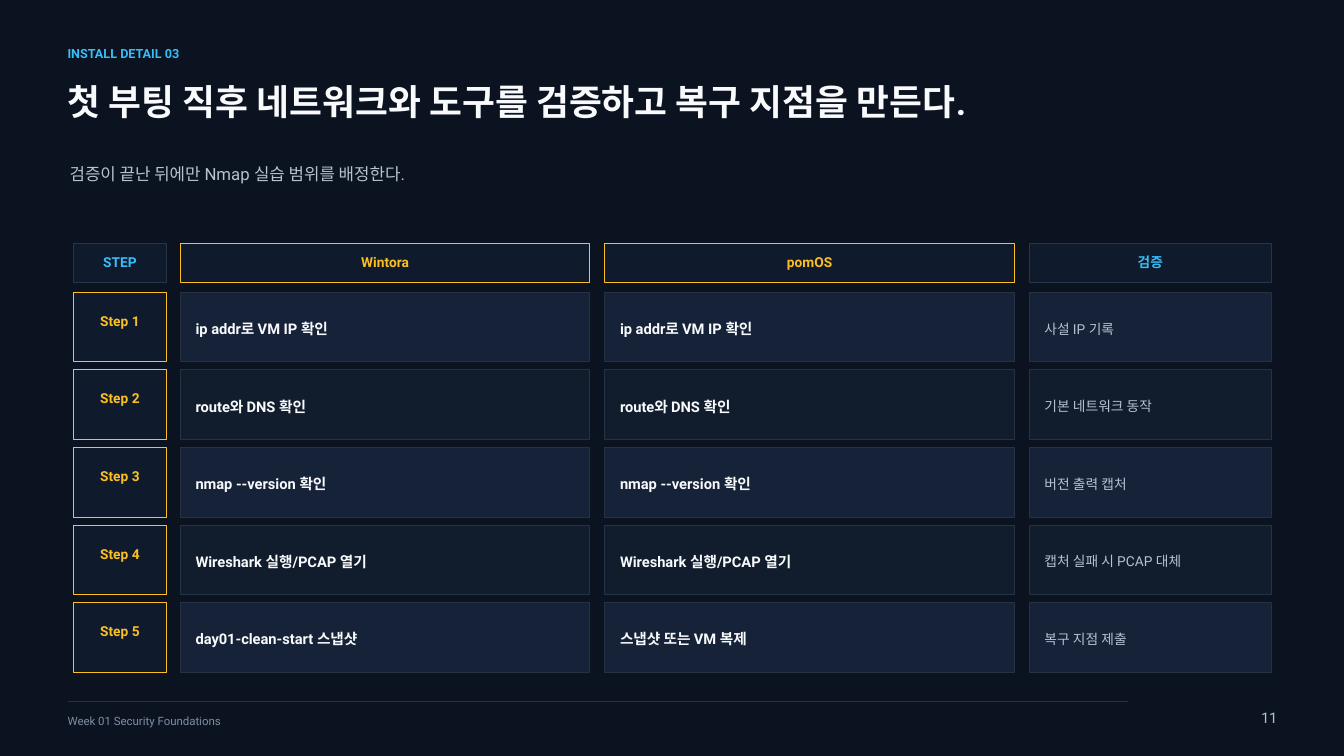
from pptx import Presentation
from pptx.dml.color import RGBColor
from pptx.enum.shapes import MSO_CONNECTOR, MSO_SHAPE
from pptx.enum.text import MSO_ANCHOR, MSO_AUTO_SIZE, PP_ALIGN
from pptx.oxml.ns import qn
from pptx.util import Inches, Pt
from lxml import etree

COLORS = {
    "page": "0B1220", "head": "0F1B2D", "odd": "152238", "even": "111C2D",
    "edge": "243244", "head_edge": "263548", "amber": "FBBF24",
    "sky": "38BDF8", "white": "F8FAFC", "soft": "B6C2D1", "muted": "7D8EA3",
}
# left edge and width of each column
COLUMNS = [(0.73, 0.92), (1.79, 4.06), (6, 4.06), (10.21, 2.4)]
HEADERS = [
    ("STEP", "sky", "head_edge"),
    ("Wintora", "amber", "amber"),
    ("pomOS", "amber", "amber"),
    ("검증", "sky", "head_edge"),
]
STEPS = [
    ("ip addr로 VM IP 확인", "ip addr로 VM IP 확인", "사설 IP 기록"),
    ("route와 DNS 확인", "route와 DNS 확인", "기본 네트워크 동작"),
    ("nmap --version 확인", "nmap --version 확인", "버전 출력 캡처"),
    ("Wireshark 실행/PCAP 열기", "Wireshark 실행/PCAP 열기", "캡처 실패 시 PCAP 대체"),
    ("day01-clean-start 스냅샷", "스냅샷 또는 VM 복제", "복구 지점 제출"),
]
HEAD_TOP, HEAD_HEIGHT = 2.42, 0.38
ROW_TOP, ROW_HEIGHT, ROW_PITCH = 2.9, 0.69, 0.77

# insets are left, top, right, bottom
HEAD = {"size": 9.8, "bold": True, "align": PP_ALIGN.CENTER, "insets": (0.1, 0.1, 0.1, 0)}
STEP = {"size": 9.8, "bold": True, "align": PP_ALIGN.CENTER, "insets": (0.08, 0.2, 0.08, 0)}
ACTION = {"size": 10.5, "bold": True, "anchor": MSO_ANCHOR.MIDDLE,
          "insets": (0.15, 0.12, 0.14, 0.09)}
CHECK = {**ACTION, "size": 9.8, "bold": False}


def rgb(name):
    return RGBColor.from_string(COLORS[name])


def write(sp, text, color, size, bold=False, align=PP_ALIGN.LEFT,
          anchor=MSO_ANCHOR.TOP, insets=(0, 0, 0, 0)):
    """Put one formatted paragraph into a shape."""
    tf = sp.text_frame
    frame = {"word_wrap": True, "auto_size": MSO_AUTO_SIZE.NONE, "vertical_anchor": anchor}
    for side, inset in zip(("left", "top", "right", "bottom"), insets):
        frame[f"margin_{side}"] = Inches(inset)
    for name, value in frame.items():
        setattr(tf, name, value)
    p = tf.paragraphs[0]
    p.alignment = align
    r = p.add_run()
    r.text = text
    for name, value in {"name": "Roboto", "size": Pt(size), "bold": bold}.items():
        setattr(r.font, name, value)
    r.font.color.rgb = rgb(color)


def add_text(s, box, text, color, size, **style):
    sp = s.shapes.add_textbox(*map(Inches, box))
    write(sp, text, color, size, **style)


def add_cell(s, box, fill, edge, text, color, style):
    sp = s.shapes.add_shape(MSO_SHAPE.RECTANGLE, *map(Inches, box))
    sp.shadow.inherit = False
    sp.fill.solid()
    sp.fill.fore_color.rgb = rgb(fill)
    sp.line.color.rgb = rgb(edge)
    sp.line.width = Pt(0.75)
    write(sp, text, color, **style)


def add_title(s, box, text):
    title = s.shapes.title
    for name, value in zip(("left", "top", "width", "height"), box):
        setattr(title, name, Inches(value))
    write(title, text, "white", 25.5, bold=True)


def add_rule(s, left, right, y):
    rule = s.shapes.add_connector(
        MSO_CONNECTOR.STRAIGHT, Inches(left), Inches(y), Inches(right), Inches(y))
    rule.line.color.rgb = rgb("edge")
    rule.line.width = Pt(0.75)
    etree.SubElement(rule._element.spPr, qn("a:effectLst"))


def add_step_grid(s):
    for (left, width), (text, color, edge) in zip(COLUMNS, HEADERS):
        add_cell(s, (left, HEAD_TOP, width, HEAD_HEIGHT), "head", edge, text, color, HEAD)
    for i, (first, second, check) in enumerate(STEPS):
        band = "even" if i % 2 else "odd"
        cells = [
            (f"Step {i + 1}", "head", "amber", "amber", STEP),
            (first, band, "edge", "white", ACTION),
            (second, band, "edge", "white", ACTION),
            (check, band, "edge", "soft", CHECK),
        ]
        top = ROW_TOP + i * ROW_PITCH
        for (left, width), (text, fill, edge, color, style) in zip(COLUMNS, cells):
            add_cell(s, (left, top, width, ROW_HEIGHT), fill, edge, text, color, style)


def main():
    prs = Presentation()
    prs.slide_width, prs.slide_height = Inches(13.33), Inches(7.5)
    s = prs.slides.add_slide(prs.slide_layouts[5])
    s.background.fill.solid()
    s.background.fill.fore_color.rgb = rgb("page")

    add_text(s, (0.67, 0.46, 2.81, 0.23), "INSTALL DETAIL 03", "sky", 9, bold=True)
    add_title(s, (0.67, 0.79, 9.38, 0.85),
              "첫 부팅 직후 네트워크와 도구를 검증하고 복구 지점을 만든다.")
    add_text(s, (0.69, 1.62, 9.58, 0.46),
             "검증이 끝난 뒤에만 Nmap 실습 범위를 배정한다.", "soft", 12)
    add_step_grid(s)
    add_rule(s, 0.67, 11.19, 6.96)
    add_text(s, (0.67, 7.08, 6.25, 0.21), "Week 01 Security Foundations", "muted", 8.2)
    add_text(s, (12.19, 7.03, 0.48, 0.27), "11", "soft", 10.5, align=PP_ALIGN.RIGHT)
    prs.save("out.pptx")


if __name__ == "__main__":
    main()
